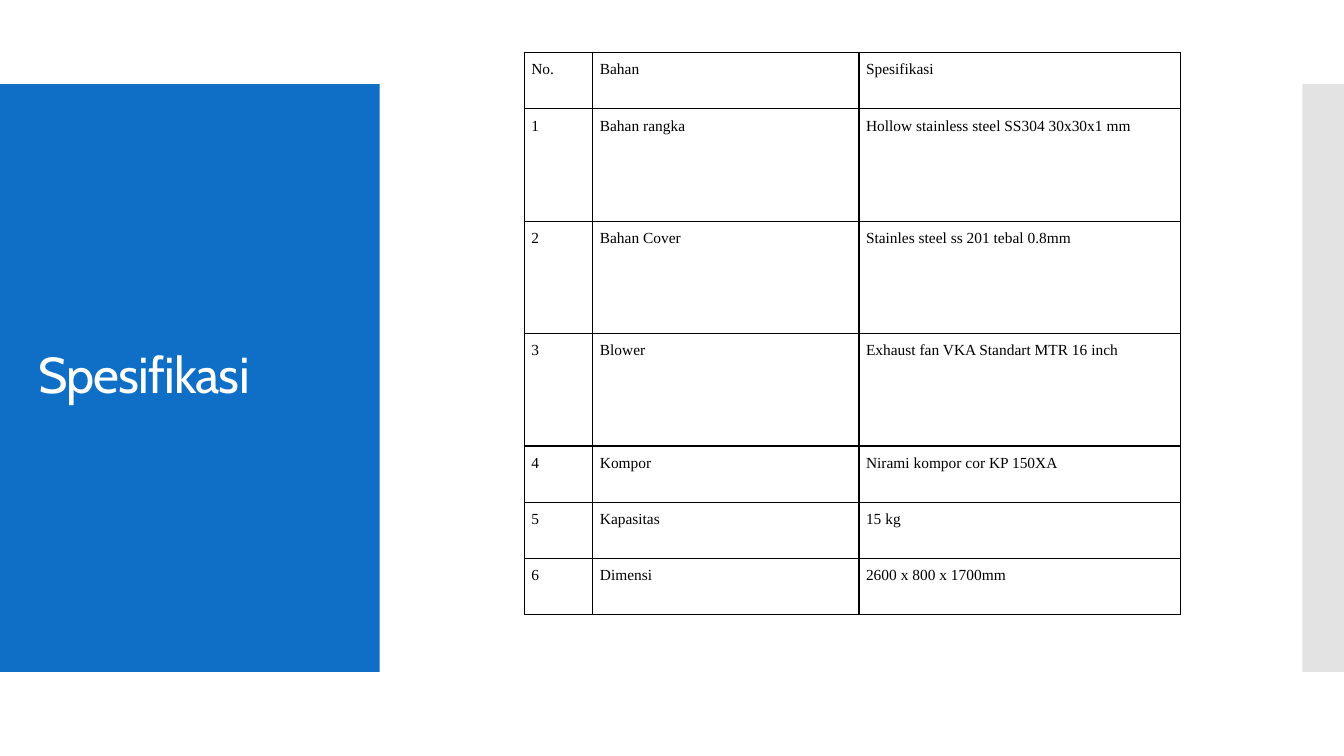
from pptx import Presentation
from pptx import util as u
from pptx.dml import color
from pptx.enum import shapes, text
from lxml import etree

WIDE, HIGH = 13.33, 7.5
UNIT = HIGH / 18
NS = "http://schemas.openxmlformats.org/drawingml/2006/main"
COLS = (0.68, 2.64, 3.19)
UNITS = (1, 2, 2, 2, 1, 1, 1)
ROWS = (
    ("No.", "Bahan", "Spesifikasi"),
    ("1", "Bahan rangka", "Hollow stainless steel SS304 30x30x1 mm"),
    ("2", "Bahan Cover", "Stainles steel ss 201 tebal 0.8mm"),
    ("3", "Blower", "Exhaust fan VKA Standart MTR 16 inch"),
    ("4", "Kompor", "Nirami kompor cor KP 150XA"),
    ("5", "Kapasitas", "15 kg"),
    ("6", "Dimensi", "2600 x 800 x 1700mm"),
)


def paint(tone):
    return color.RGBColor.from_string(tone)


def child(node, tag, **attrs):
    return etree.SubElement(node, f"{{{NS}}}{tag}", **attrs)


def place(area):
    return [u.Inches(part * UNIT) for part in area]


def panel(slide, area, tone, alpha=None):
    box = slide.shapes.add_shape(shapes.MSO_SHAPE.RECTANGLE, *place(area))
    box.shadow.inherit = False
    box.line.fill.background()
    box.fill.solid()
    box.fill.fore_color.rgb = paint(tone)
    if alpha:
        hue = box._element.spPr.find(f".//{{{NS}}}srgbClr")
        child(hue, "alpha", val=str(alpha * 1000))


def write(para, words, face, size, tone, space):
    para.line_spacing = space
    run = para.add_run()
    run.text = words
    font = run.font
    font.name, font.size, font.bold = face, u.Pt(size), False
    font.color.rgb = paint(tone)
    return run


def title(slide, area, words):
    frame = slide.shapes.add_textbox(*place(area)).text_frame
    frame.word_wrap = True
    frame.vertical_anchor = text.MSO_ANCHOR.MIDDLE
    run = write(frame.paragraphs[0], words, "Cabin", 36, "FFFFFF", 0.9)
    run.font._element.set("spc", "-60")


def border(cell, tone):
    props = cell._tc.get_or_add_tcPr()
    for side in ("lnL", "lnR", "lnT", "lnB"):
        line = child(props, side, w=str(u.Pt(1)))
        child(child(line, "solidFill"), "srgbClr", val=tone)


def entry(cell, words):
    cell.margin_left = cell.margin_right = u.Inches(0.07)
    cell.margin_top = cell.margin_bottom = 0
    border(cell, "000000")
    cell.fill.background()
    para = cell.text_frame.paragraphs[0]
    para.alignment = text.PP_ALIGN.JUSTIFY
    write(para, words, "Times New Roman", 11, "000000", 1.5)


def table(slide, left, top, high):
    grid = slide.shapes.add_table(
        len(ROWS), len(COLS), u.Inches(left), u.Inches(top),
        u.Inches(sum(COLS)), u.Inches(high)).table
    grid.first_row = grid.horz_banding = False
    for col, wide in zip(grid.columns, COLS):
        col.width = u.Inches(wide)
    for row, unit, words in zip(grid.rows, UNITS, ROWS):
        row.height = u.Inches(high * unit / sum(UNITS))
        for cell, word in zip(row.cells, words):
            entry(cell, word)


def main():
    deck = Presentation()
    deck.slide_width, deck.slide_height = u.Inches(WIDE), u.Inches(HIGH)
    slide = deck.slides.add_slide(deck.slide_layouts[6])
    panel(slide, (0, 2, 9.04, 14), "0F6FC6")
    panel(slide, (31, 2, 1, 14), "C8C8C8", 50)
    title(slide, (0.67, 2.95, 7.73, 12.07), "Spesifikasi")
    table(slide, 5.2, 0.52, 5.58)
    deck.save("out.pptx")


if __name__ == "__main__":
    main()
